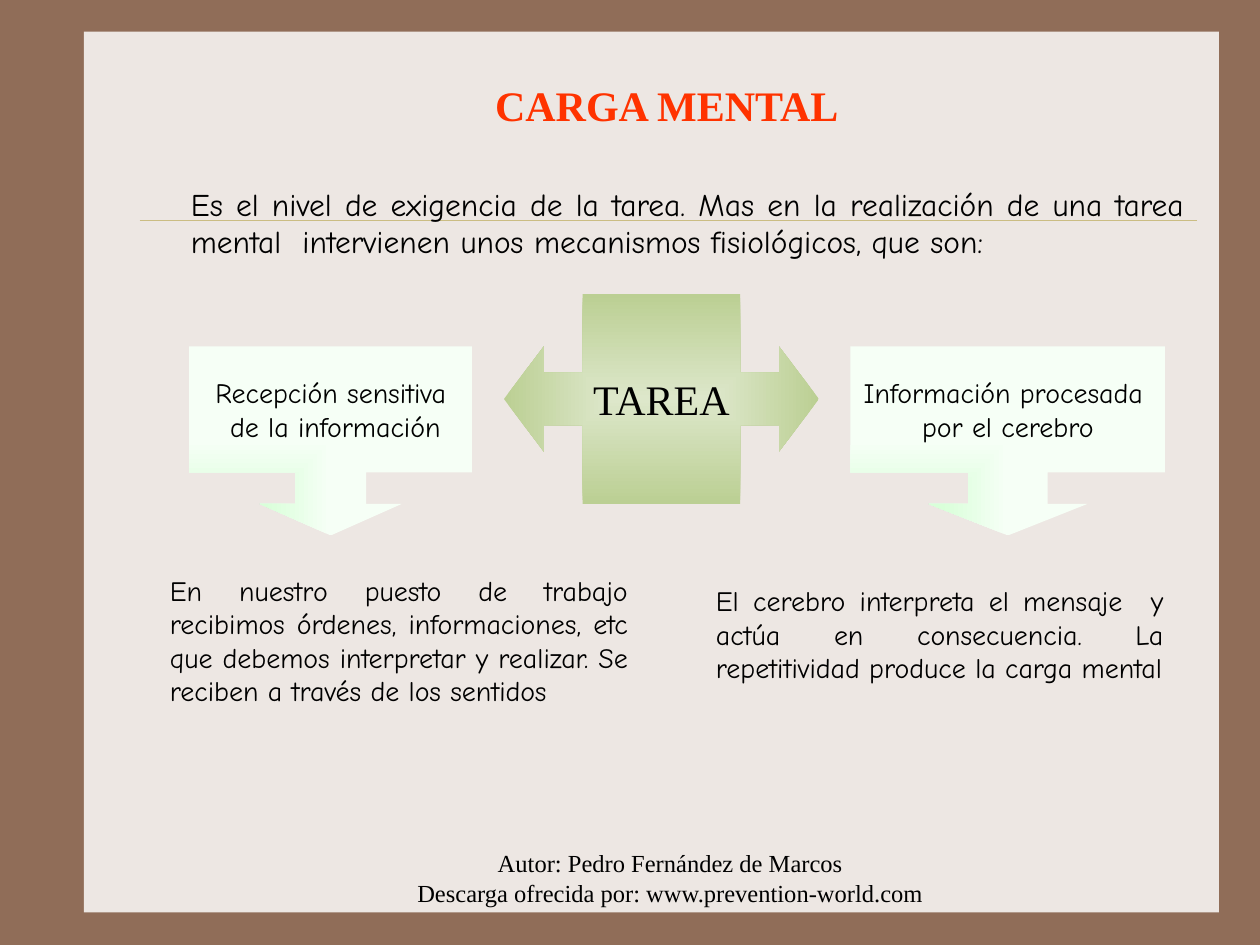
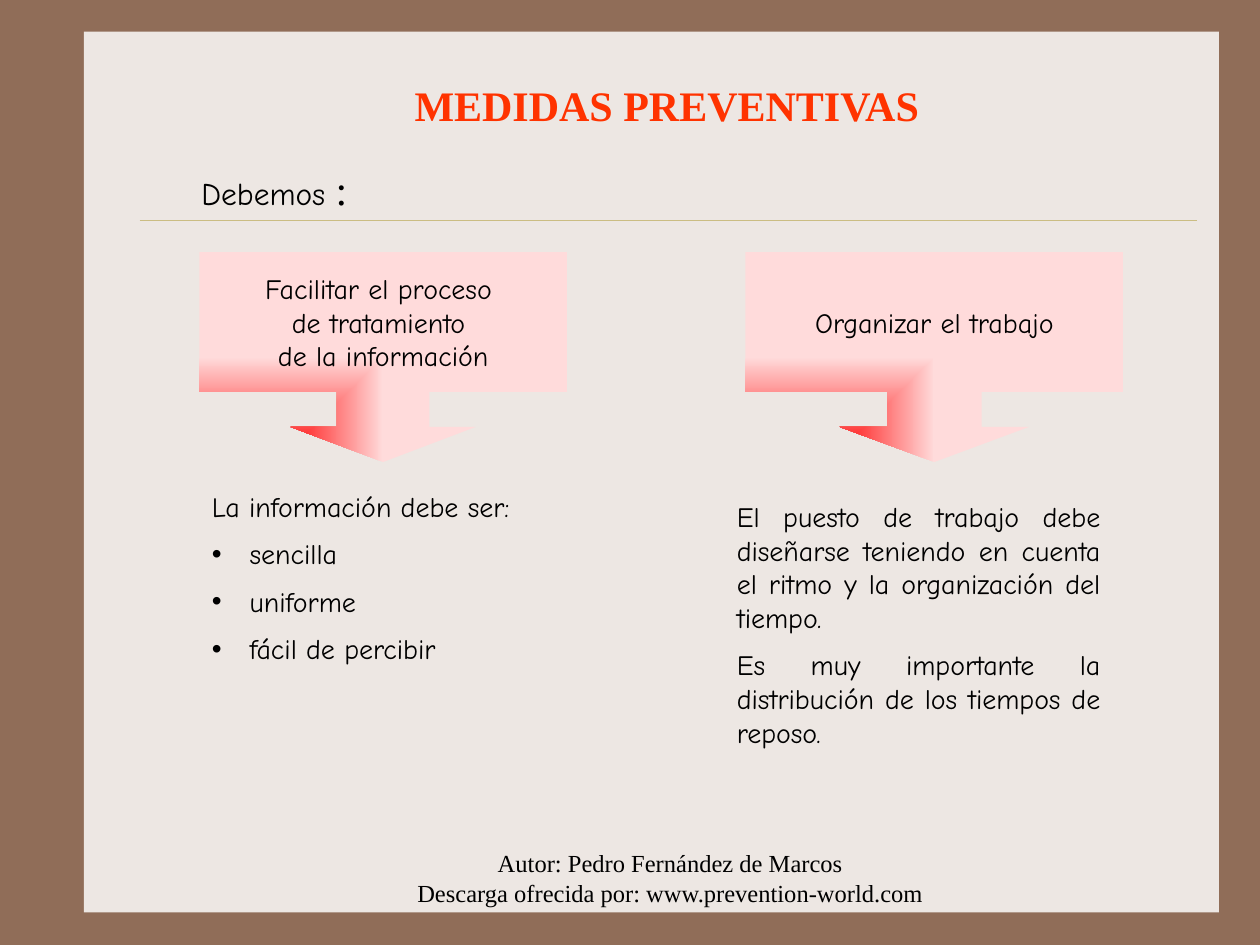
"""Build two slides on mental workload: what it is and how to prevent it."""
from lxml.etree import SubElement
from pptx import Presentation
from pptx.dml.color import RGBColor as RGB
from pptx.enum.shapes import MSO_CONNECTOR as LINE, MSO_SHAPE as SHAPE
from pptx.enum.text import MSO_ANCHOR as ANCHOR, PP_ALIGN as ALIGN
from pptx.oxml.ns import qn
from pptx.util import Emu, Inches, Pt

COLORS = {
    "frame": "906D58", "panel": "EDE7E3", "rule": "CBBD83",
    "title": "FF3300", "text": "000000",
    "olive_in": "DDE7CA", "olive_out": "BBCF93",
    "mint_in": "CCFFCC", "mint_out": "F6FFF6",
    "red_in": "FF0000", "red_out": "FFDBDB",
}
C = {name: RGB.from_string(value) for name, value in COLORS.items()}
COMIC, TIMES = "Comic Neue", "Times New Roman"
CENTER_FOCUS, CORNER_FOCUS = (50, 50, 50, 50), (0, 100, 100, 0)

prs = Presentation()
prs.slide_width, prs.slide_height = Inches(10), Inches(7.5)
COL, ROW = prs.slide_width / 120, prs.slide_height / 90


def grid(col, row, cols, rows):
    """Turn grid columns and rows into slide lengths."""
    return [Emu(round(n * unit)) for n, unit in zip((col, row, cols, rows), (COL, ROW, COL, ROW))]


def write(sp, lines, size=16, font=COMIC, color="text", bold=False, align=ALIGN.JUSTIFY,
          wrap=True, anchor=ANCHOR.TOP, gap=0, bullets_from=None):
    """Fill a shape with one paragraph per line; a line may be a list of (text, size, font) runs."""
    tf = sp.text_frame
    tf.word_wrap, tf.vertical_anchor = wrap, anchor
    for i, line in enumerate(lines):
        p = tf.paragraphs[0] if i == 0 else tf.add_paragraph()
        p.alignment = align
        if i:
            p.space_before = Pt(gap)
        if bullets_from is not None and i >= bullets_from:
            pPr = p._p.get_or_add_pPr()
            pPr.set("marL", str(Inches(0.3)))
            pPr.set("indent", str(-Inches(0.3)))
            SubElement(pPr, qn("a:buFont"), typeface="Arial")
            SubElement(pPr, qn("a:buChar"), char="•")
        for text, run_size, run_font in [(line, size, font)] if isinstance(line, str) else line:
            r = p.add_run()
            r.text = text
            r.font.size, r.font.name, r.font.bold = Pt(run_size), run_font, bold
            r.font.color.rgb = C[color]


down, both = SHAPE.DOWN_ARROW_CALLOUT, SHAPE.LEFT_RIGHT_ARROW_CALLOUT
pages = [
    {
        "title": "CARGA MENTAL",
        "texts": [
            ((17, 17, 97, 8.4), ["Es el nivel de exigencia de la tarea. Mas en la realización de una "
                                 "tarea mental  intervienen unos mecanismos fisiológicos, que son:"],
             {"size": 18}),
            ((15, 54, 46, 17), ["En nuestro puesto de trabajo recibimos órdenes, informaciones, etc que "
                                "debemos interpretar y realizar. Se reciben a través de los sentidos"], {}),
            ((67, 55, 45, 14), ["El cerebro interpreta el mensaje  y actúa en consecuencia. "
                                "La repetitividad produce la carga mental"], {}),
        ],
        "callouts": [
            (both, (48, 28, 30, 20), "olive", CENTER_FOCUS, (0.25, 0.25, 0.19, 0.5),
             ["TAREA"], {"size": 24, "font": TIMES}),
            (down, (18, 33, 27, 18), "mint", CORNER_FOCUS, (0.375, 0.375, 1 / 6, 2 / 3),
             ["Recepción sensitiva", " de la información"], {}),
            (down, (81, 33, 30, 18), "mint", CORNER_FOCUS, (0.42, 0.42, 1 / 6, 2 / 3),
             ["Información procesada ", "por el cerebro"], {}),
        ],
    },
    {
        "title": "MEDIDAS PREVENTIVAS",
        "texts": [
            ((18, 15, 91, 6), [[("Debemos", 18, COMIC), (" :", 24, TIMES)]], {}),
            ((19, 46, 37, 19), ["La información debe ser:", "sencilla", "uniforme", "fácil de percibir"],
             {"align": ALIGN.LEFT, "gap": 8, "bullets_from": 1}),
            ((69, 47, 37, 25), ["El puesto de trabajo debe diseñarse teniendo en cuenta el ritmo y "
                                "la organización del tiempo.",
                                "Es muy importante la distribución de los tiempos de reposo."],
             {"gap": 8}),
        ],
        "callouts": [
            (down, (19, 24, 35, 20), "red", CORNER_FOCUS, (0.44, 0.44, 1 / 6, 2 / 3),
             ["Facilitar el proceso ", "de tratamiento ", "de la información"], {}),
            (down, (71, 24, 36, 20), "red", CORNER_FOCUS, (0.45, 0.45, 1 / 6, 2 / 3),
             ["Organizar el trabajo"], {}),
        ],
    },
]

for page in pages:
    s = prs.slides.add_slide(prs.slide_layouts[6])
    s.background.fill.solid()
    s.background.fill.fore_color.rgb = C["frame"]

    panel = s.shapes.add_shape(SHAPE.RECTANGLE, *grid(8, 3, 108.1, 83.9))
    panel.shadow.inherit = False
    panel.fill.solid()
    panel.fill.fore_color.rgb = C["panel"]
    panel.line.fill.background()

    rule = s.shapes.add_connector(LINE.STRAIGHT, *grid(13.3, 21, 114, 21))
    rule.line.color.rgb, rule.line.width = C["rule"], Pt(0.25)
    SubElement(rule._element.spPr, qn("a:effectLst"))

    footer = s.shapes.add_textbox(*grid(31.7, 80.2, 64.3, 6))
    write(footer, ["Autor: Pedro Fernández de Marcos", "Descarga ofrecida por: www.prevention-world.com"],
          size=14, font=TIMES, align=ALIGN.CENTER)
    title = s.shapes.add_textbox(*grid(11, 7, 105, 6))
    write(title, [page["title"]], size=24, font=TIMES, color="title", bold=True, align=ALIGN.CENTER)

    for at, lines, style in page["texts"]:
        write(s.shapes.add_textbox(*grid(*at)), lines, **style)

    for kind, at, tint, focus, adjustments, lines, style in page["callouts"]:
        sp = s.shapes.add_shape(kind, *grid(*at))
        sp.shadow.inherit = False
        sp.line.fill.background()
        for i, value in enumerate(adjustments):
            sp.adjustments[i] = value
        sp.fill.gradient()
        for stop, end in zip(sp.fill.gradient_stops, ("in", "out")):
            stop.color.rgb = C[f"{tint}_{end}"]
        grad = sp._element.spPr.find(qn("a:gradFill"))
        grad.remove(grad.find(qn("a:lin")))
        shade = SubElement(grad, qn("a:path"), path="rect")
        SubElement(shade, qn("a:fillToRect"), {side: str(n * 1000) for side, n in zip("ltrb", focus)})
        write(sp, lines, align=ALIGN.CENTER, wrap=False, anchor=ANCHOR.MIDDLE, **style)

prs.save("out.pptx")
